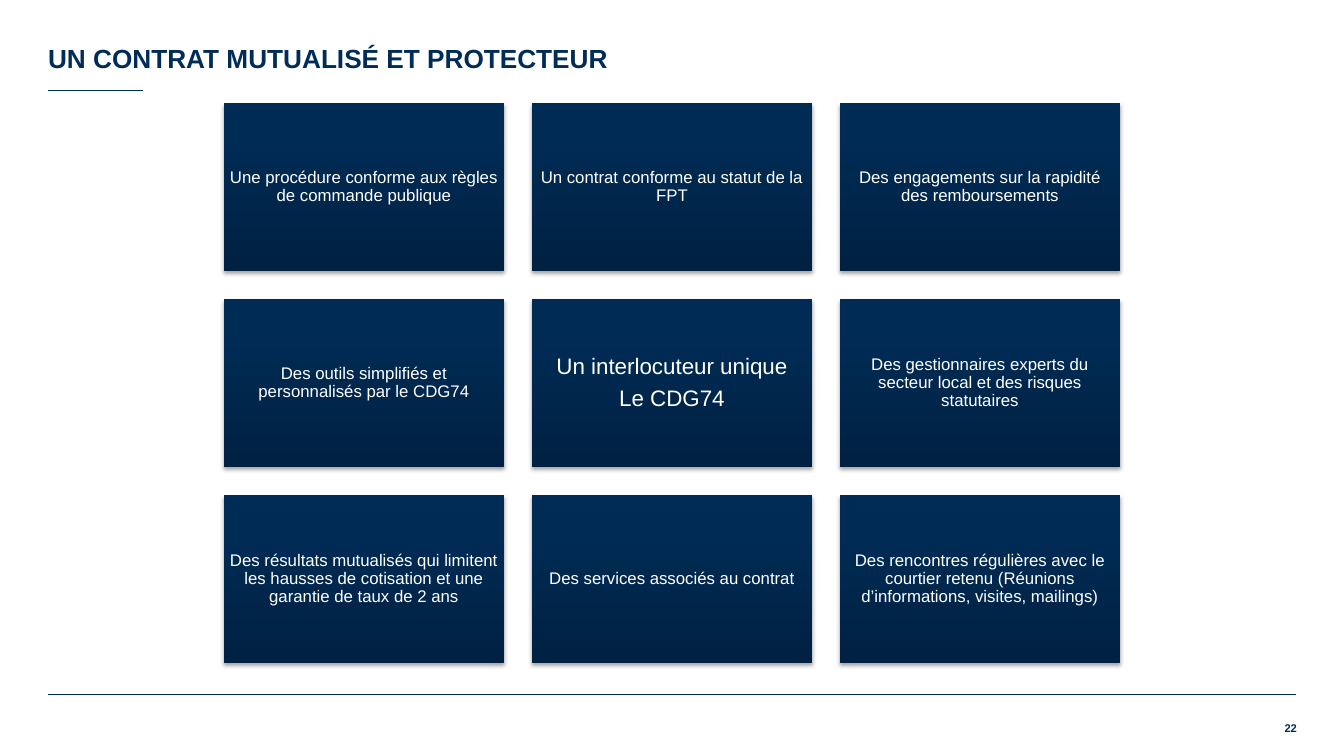
from dataclasses import dataclass

from lxml.etree import SubElement
from pptx import Presentation
from pptx.dml.color import RGBColor
from pptx.enum.shapes import MSO_CONNECTOR, MSO_SHAPE
from pptx.enum.text import MSO_ANCHOR, MSO_AUTO_SIZE, PP_ALIGN
from pptx.oxml.ns import qn
from pptx.slide import Slide
from pptx.text.text import TextFrame
from pptx.util import Emu, Pt

NAVY = RGBColor(0x00, 0x2C, 0x58)
CARD_BOTTOM = RGBColor(0x00, 0x21, 0x42)
CARD_TOP = RGBColor(0x00, 0x2B, 0x55)
WHITE = RGBColor(0xFF, 0xFF, 0xFF)
FONT = "Arial"

SLIDE_WIDTH, SLIDE_HEIGHT = 1344, 756
COLUMNS = 3
GRID_LEFT, GRID_TOP = 224, 103
CARD_WIDTH, CARD_HEIGHT, GAP = 280, 168, 28


@dataclass(frozen=True)
class Card:
    lines: tuple[str, ...]
    size: int = 12
    inset: int = 5


@dataclass(frozen=True)
class Rule:
    left: int
    right: int
    y: int


CARDS = (
    Card(("Une procédure conforme aux règles de commande publique",)),
    Card(("Un contrat conforme au statut de la FPT",)),
    Card(("Des engagements sur la rapidité des remboursements",)),
    Card(("Des outils simplifiés et personnalisés par le CDG74",)),
    Card(("Un interlocuteur unique", "Le CDG74"), size=16, inset=7),
    Card(("Des gestionnaires experts du secteur local et des risques statutaires",)),
    Card(("Des résultats mutualisés qui limitent les hausses de cotisation "
          "et une garantie de taux de 2 ans",)),
    Card(("Des services associés au contrat",)),
    Card(("Des rencontres régulières avec le courtier retenu "
          "(Réunions d’informations, visites, mailings)",)),
)
RULES = (Rule(48, 1296, 694), Rule(48, 143, 90))


def px(length: int) -> Emu:
    return Emu(round(length * 12192000 / SLIDE_WIDTH))


def fill_text(frame: TextFrame, lines: tuple[str, ...], size: float, color: RGBColor,
              align: PP_ALIGN, inset: int = 0, bold: bool = False) -> None:
    frame.word_wrap = True
    frame.auto_size = MSO_AUTO_SIZE.NONE
    frame.margin_left = frame.margin_right = px(inset)
    frame.margin_top = frame.margin_bottom = px(inset)
    frame.text = "\n".join(lines)
    for index, paragraph in enumerate(frame.paragraphs):
        paragraph.alignment = align
        paragraph.space_before = Pt(0.35 * size if index else 0)
        font = paragraph.font
        font.name, font.size, font.bold = FONT, Pt(size), bold
        font.color.rgb = color


def add_rule(slide: Slide, rule: Rule) -> None:
    line = slide.shapes.add_connector(
        MSO_CONNECTOR.STRAIGHT, px(rule.left), px(rule.y), px(rule.right), px(rule.y))
    line.line.color.rgb = NAVY
    line.line.width = Pt(0.5)
    SubElement(line._element.spPr, qn("a:effectLst"))


def add_card(slide: Slide, card: Card, row: int, column: int) -> None:
    shape = slide.shapes.add_shape(
        MSO_SHAPE.RECTANGLE,
        px(GRID_LEFT + column * (CARD_WIDTH + GAP)),
        px(GRID_TOP + row * (CARD_HEIGHT + GAP)),
        px(CARD_WIDTH), px(CARD_HEIGHT))
    shape.line.fill.background()
    shape.fill.gradient()
    shape.fill.gradient_angle = 90
    bottom, top = shape.fill.gradient_stops
    bottom.position, top.position = 0, 0.8
    bottom.color.rgb, top.color.rgb = CARD_BOTTOM, CARD_TOP

    shape.shadow.inherit = False
    effects = shape._element.spPr.find(qn("a:effectLst"))
    shadow = SubElement(effects, qn("a:outerShdw"), blurRad=str(Pt(3.1)),
                        dist=str(Pt(1.8)), dir="5400000", rotWithShape="0")
    shadow_color = SubElement(shadow, qn("a:srgbClr"), val="000000")
    SubElement(shadow_color, qn("a:alpha"), val="35000")

    frame = shape.text_frame
    frame.vertical_anchor = MSO_ANCHOR.MIDDLE
    fill_text(frame, card.lines, card.size, WHITE, PP_ALIGN.CENTER, card.inset)
    for paragraph in frame.paragraphs:
        paragraph.line_spacing = 0.9


def add_title(slide: Slide) -> None:
    title = slide.shapes.title
    title.left, title.top, title.width, title.height = px(48), px(0), px(1248), px(74)
    title.text_frame.vertical_anchor = MSO_ANCHOR.BOTTOM
    fill_text(title.text_frame, ("UN CONTRAT MUTUALISÉ ET PROTECTEUR",), 18.7, NAVY,
              PP_ALIGN.LEFT, bold=True)


def add_page_number(slide: Slide) -> None:
    box = slide.shapes.add_textbox(px(1258), px(721), px(39), px(20))
    fill_text(box.text_frame, ("22",), 8, NAVY, PP_ALIGN.RIGHT, bold=True)


def main() -> None:
    presentation = Presentation()
    presentation.slide_width = px(SLIDE_WIDTH)
    presentation.slide_height = px(SLIDE_HEIGHT)
    slide = presentation.slides.add_slide(presentation.slide_layouts[5])
    add_title(slide)
    for rule in RULES:
        add_rule(slide, rule)
    for index, card in enumerate(CARDS):
        add_card(slide, card, *divmod(index, COLUMNS))
    add_page_number(slide)
    presentation.save("out.pptx")


if __name__ == "__main__":
    main()
